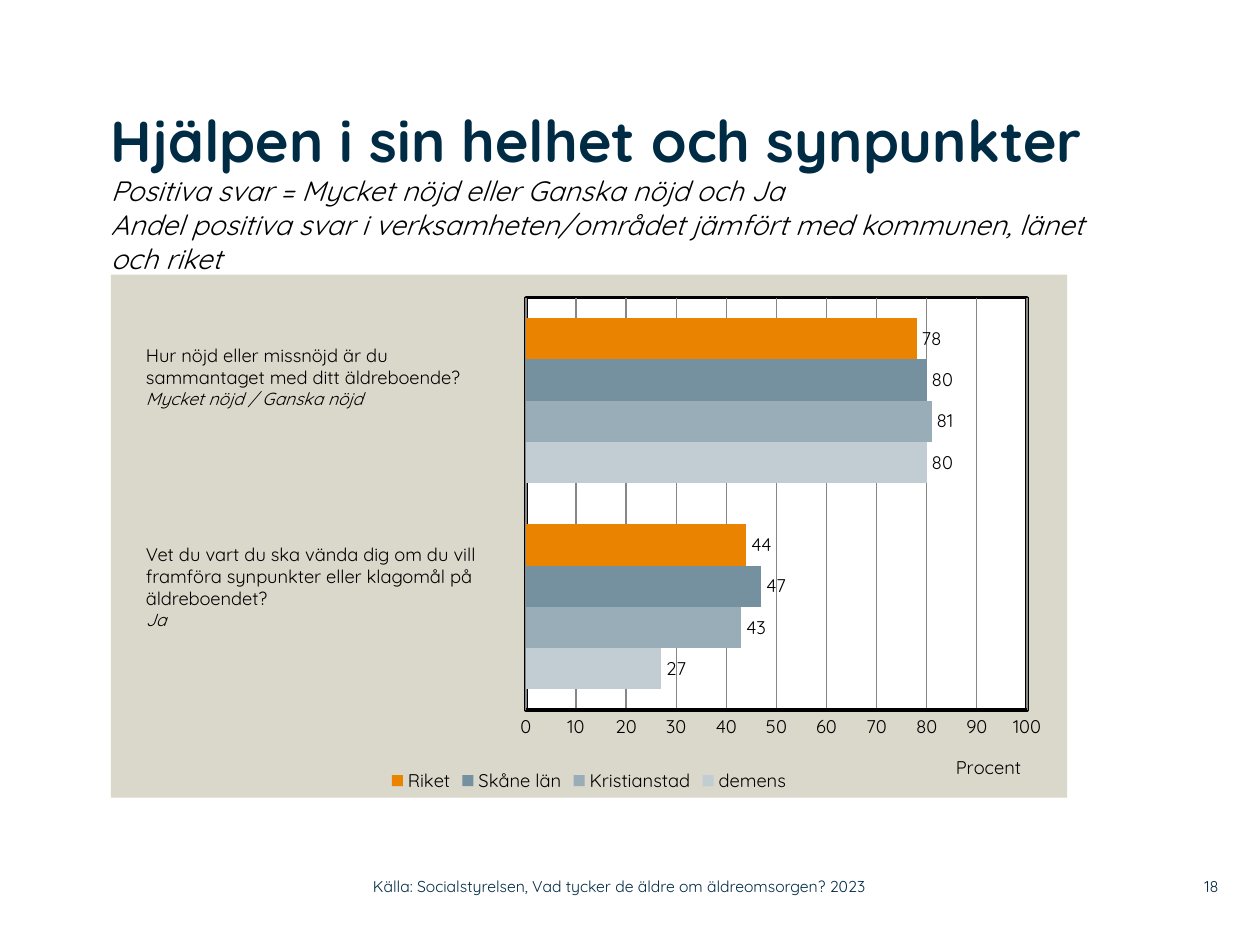
"""Build a survey slide with a clustered bar chart and its questions."""
from pptx import Presentation
from pptx.chart.data import CategoryChartData
from pptx.dml.color import RGBColor
from pptx.enum.chart import XL_CHART_TYPE, XL_LABEL_POSITION, XL_LEGEND_POSITION, XL_TICK_MARK
from pptx.enum.text import MSO_ANCHOR, MSO_AUTO_SIZE, PP_ALIGN
from pptx.oxml import parse_xml
from pptx.oxml.ns import nsdecls, qn
from pptx.util import Inches, Pt

FONT, NAVY, BLACK = "Quicksand", "002B45", "000000"
HEADING = "Hjälpen i sin helhet och synpunkter"
SUBTITLE = [
    "Positiva svar = Mycket nöjd eller Ganska nöjd och Ja",
    "Andel positiva svar i verksamheten/området jämfört med kommunen, länet och riket",
]
QUESTIONS = [
    (2.68, ["Hur nöjd eller missnöjd är du", "sammantaget med ditt äldreboende?"],
     "Mycket nöjd / Ganska nöjd"),
    (4.26, ["Vet du vart du ska vända dig om du vill framföra synpunkter eller "
            "klagomål på äldreboendet?"], "Ja"),
]
FOOTER = [
    ((2.96, 6.89, 4.43, 0.29), "Källa: Socialstyrelsen, Vad tycker de äldre om äldreomsorgen? 2023",
     PP_ALIGN.LEFT),
    ((9.2, 6.89, 0.47, 0.29), "18", PP_ALIGN.RIGHT),
]
CATEGORIES = ["1", "2"]
SERIES = [
    ("demens", (27, 80), "C2CDD3"),
    ("Kristianstad", (43, 81), "99ADB9"),
    ("Skåne län", (47, 80), "75909F"),
    ("Riket", (44, 78), "E98300"),
]


def rgb(value):
    return RGBColor.from_string(value)


def style(font, size=10.5, color=BLACK, bold=False, italic=False):
    font.name, font.size, font.bold, font.italic = FONT, Pt(size), bold, italic
    font.color.rgb = rgb(color)


def add_text(p, text, **fmt):
    r = p.add_run()
    r.text = text
    style(r.font, **fmt)


def clear_margins(tf):
    tf.margin_left = tf.margin_right = tf.margin_top = tf.margin_bottom = 0


def add_box(s, at):
    tf = s.shapes.add_textbox(*map(Inches, at)).text_frame
    tf.word_wrap = True
    return tf


def layout(x, y, w=None, h=None):
    parts = [("xMode", "edge"), ("yMode", "edge"), ("x", x), ("y", y)]
    if w:
        parts = [("layoutTarget", "inner")] + parts + [("w", w), ("h", h)]
    body = "".join(f'<c:{tag} val="{val}"/>' for tag, val in parts)
    return parse_xml(f'<c:layout {nsdecls("c")}><c:manualLayout>{body}</c:manualLayout></c:layout>')


def area(fill, line=""):
    border = (f'<a:ln w="{Pt(2)}"><a:solidFill><a:srgbClr val="{line}"/></a:solidFill></a:ln>'
              if line else "<a:ln><a:noFill/></a:ln>")
    return parse_xml(f'<c:spPr {nsdecls("c", "a")}><a:solidFill><a:srgbClr val="{fill}"/>'
                     f'</a:solidFill>{border}</c:spPr>')


def drop_layout(element):
    for old in element.findall(qn("c:layout")):
        element.remove(old)


def add_title(s):
    title = s.shapes.title
    title.left, title.top, title.width, title.height = map(Inches, (0.88, 0.83, 7.79, 1.34))
    tf = title.text_frame
    clear_margins(tf)
    tf.word_wrap, tf.auto_size, tf.vertical_anchor = True, MSO_AUTO_SIZE.NONE, MSO_ANCHOR.TOP
    p = tf.paragraphs[0]
    p.alignment = PP_ALIGN.LEFT
    add_text(p, HEADING, size=33, color=NAVY, bold=True)
    for line in SUBTITLE:
        p.add_line_break()
        add_text(p, line, size=16, italic=True)


def add_survey_chart(s):
    data = CategoryChartData()
    data.categories = CATEGORIES
    for name, values, _ in SERIES:
        data.add_series(name, values)
    at = map(Inches, (0.88, 2.18, 7.59, 4.15))
    chart = s.shapes.add_chart(XL_CHART_TYPE.BAR_CLUSTERED, *at, data).chart
    style(chart.font)
    chart.has_title = False
    chart.has_legend = True
    chart.legend.position = XL_LEGEND_POSITION.BOTTOM
    chart.legend.include_in_layout = False
    style(chart.legend.font)

    plot = chart.plots[0]
    plot.gap_width, plot.overlap, plot.vary_by_categories = 100, 0, False
    for series, (_, _, color) in zip(plot.series, SERIES):
        series.format.fill.solid()
        series.format.fill.fore_color.rgb = rgb(color)
        labels = series.data_labels
        labels.show_value = True
        labels.position = XL_LABEL_POSITION.OUTSIDE_END
        style(labels.font)

    chart.category_axis.visible = False
    axis = chart.value_axis
    axis.minimum_scale, axis.maximum_scale, axis.major_unit = 0, 100, 10
    axis.major_tick_mark = axis.minor_tick_mark = XL_TICK_MARK.NONE
    axis.format.line.color.rgb, axis.format.line.width = rgb(BLACK), Pt(2)
    axis.has_major_gridlines = True
    grid = axis.major_gridlines.format.line
    grid.color.rgb, grid.width = rgb("868686"), Pt(0.75)
    style(axis.tick_labels.font)
    add_text(axis.axis_title.text_frame.paragraphs[0], "Procent")

    title = axis.axis_title._element
    drop_layout(title)
    title.find(qn("c:tx")).addnext(layout(0.88, 0.91))
    root = chart._chartSpace
    root.find(qn("c:chart")).addnext(area("DAD7CB"))
    plot_area = root.find(qn("c:chart")).find(qn("c:plotArea"))
    drop_layout(plot_area)
    plot_area.insert(0, layout(0.434, 0.044, 0.524, 0.789))
    plot_area.append(area("FFFFFF", BLACK))


def main():
    prs = Presentation()
    prs.slide_width, prs.slide_height = Inches(10), Inches(7.5)
    s = prs.slides.add_slide(prs.slide_layouts[5])
    add_survey_chart(s)
    add_title(s)
    for top, lines, answer in QUESTIONS:
        tf = add_box(s, (1.06, top, 3.1, 0.81))
        add_text(tf.paragraphs[0], lines[0])
        for line in lines[1:]:
            add_text(tf.add_paragraph(), line)
        add_text(tf.add_paragraph(), answer, size=10, italic=True)
    for at, text, align in FOOTER:
        tf = add_box(s, at)
        clear_margins(tf)
        tf.vertical_anchor = MSO_ANCHOR.MIDDLE
        tf.paragraphs[0].alignment = align
        add_text(tf.paragraphs[0], text, size=9, color=NAVY)
    prs.save("out.pptx")


if __name__ == "__main__":
    main()
